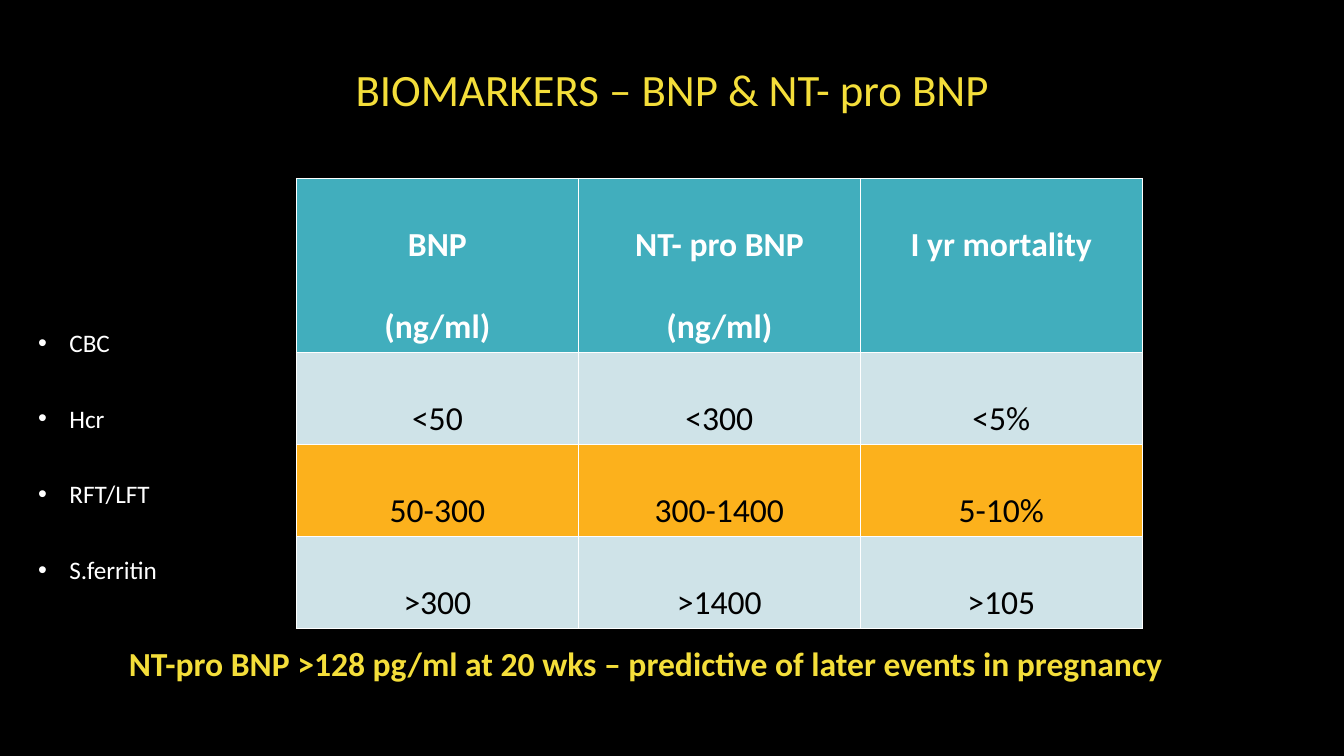
"""Build the biomarker slide: a title, a table of risk bands, a list of tests and a closing line."""
from lxml import etree
from pptx import Presentation, util as u
from pptx.dml.color import RGBColor
from pptx.enum import text
from pptx.oxml.ns import qn

HUES = {"back": "000000", "gold": "F4DE3A", "white": "FFFFFF", "teal": "41AEBD",
        "pale": "CFE3E8", "amber": "FCB11C", "black": "000000"}


def style(para, size, hue, bold=False):
    for run in para.runs:
        font = run.font
        font.name, font.size, font.bold = "Calibri", u.Pt(size), bold
        font.color.rgb = RGBColor.from_string(HUES[hue])


def place(left, top, width, height):
    return [u.Inches(n) for n in (left, top, width, height)]


deck = Presentation()
deck.slide_width, deck.slide_height = u.Inches(13.33), u.Inches(7.5)
slide = deck.slides.add_slide(deck.slide_layouts[5])
slide.background.fill.solid()
slide.background.fill.fore_color.rgb = RGBColor.from_string(HUES["back"])

title = slide.shapes.title
title.left, title.top, title.width, title.height = place(0.92, 0.4, 11.5, 1.02)
title.text_frame.text = "BIOMARKERS – BNP & NT- pro BNP"
title.text_frame.vertical_anchor = text.MSO_ANCHOR.MIDDLE
head = title.text_frame.paragraphs[0]
head.alignment, head.line_spacing = text.PP_ALIGN.CENTER, 0.9
style(head, 32, "gold")

bands = [
    ("teal", "white", 1.72, ["BNP\n(ng/ml)", "NT- pro BNP (ng/ml)", "I yr mortality"]),
    ("pale", "black", 0.91, ["<50", "<300", "<5%"]),
    ("amber", "black", 0.91, ["50-300", "300-1400", "5-10%"]),
    ("pale", "black", 0.91, [">300", ">1400", ">105"]),
]
high = sum(band[2] for band in bands)
table = slide.shapes.add_table(len(bands), 3, *place(2.94, 1.77, 8.39, high)).table
for row, (fill, ink, tall, words) in enumerate(bands):
    table.rows[row].height = u.Inches(tall)
    for col, word in enumerate(words):
        cell = table.cell(row, col)
        cell.fill.solid()
        cell.fill.fore_color.rgb = RGBColor.from_string(HUES[fill])
        cell.text_frame.text = word
        for para in cell.text_frame.paragraphs:
            para.alignment, para.line_spacing = text.PP_ALIGN.CENTER, 2.0
            style(para, 24, ink, row == 0)

note = slide.shapes.add_textbox(*place(1.18, 6.33, 10.97, 0.5)).text_frame
note.word_wrap = True
note.text = "NT-pro BNP >128 pg/ml at 20 wks – predictive of later events in pregnancy"
style(note.paragraphs[0], 24, "gold", True)

tests = slide.shapes.add_textbox(*place(0.28, 2.75, 1.8, 3.01)).text_frame
tests.word_wrap = True
tests.text = "CBC\nHcr\nRFT/LFT\nS.ferritin"
for para in tests.paragraphs:
    para.line_spacing = 2.5
    props = para._p.get_or_add_pPr()
    props.set("marL", str(u.Inches(0.31)))
    props.set("indent", str(-u.Inches(0.31)))
    etree.SubElement(props, qn("a:buFont")).set("typeface", "Arial")
    etree.SubElement(props, qn("a:buChar")).set("char", "•")
    style(para, 18, "white")

deck.save("out.pptx")
